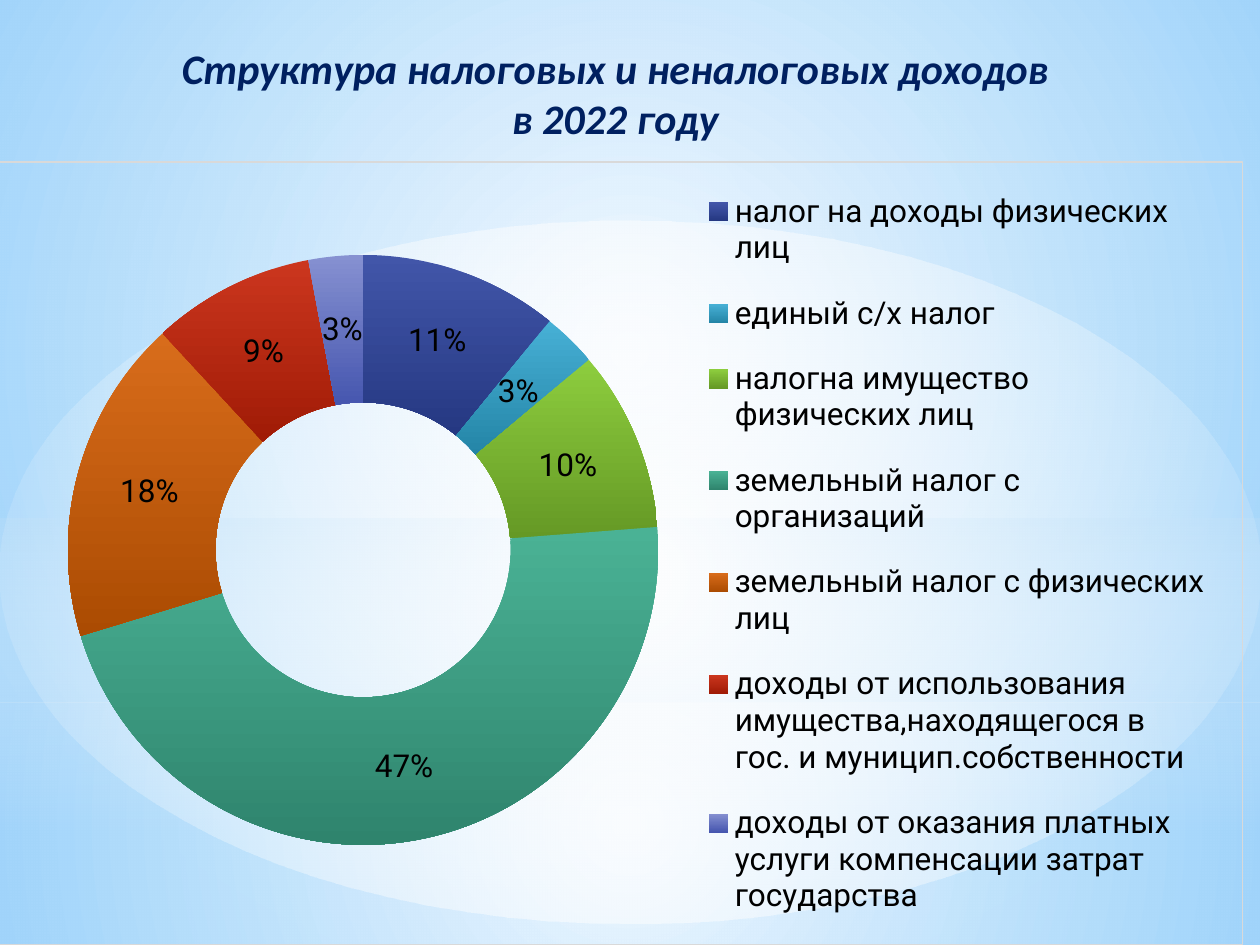
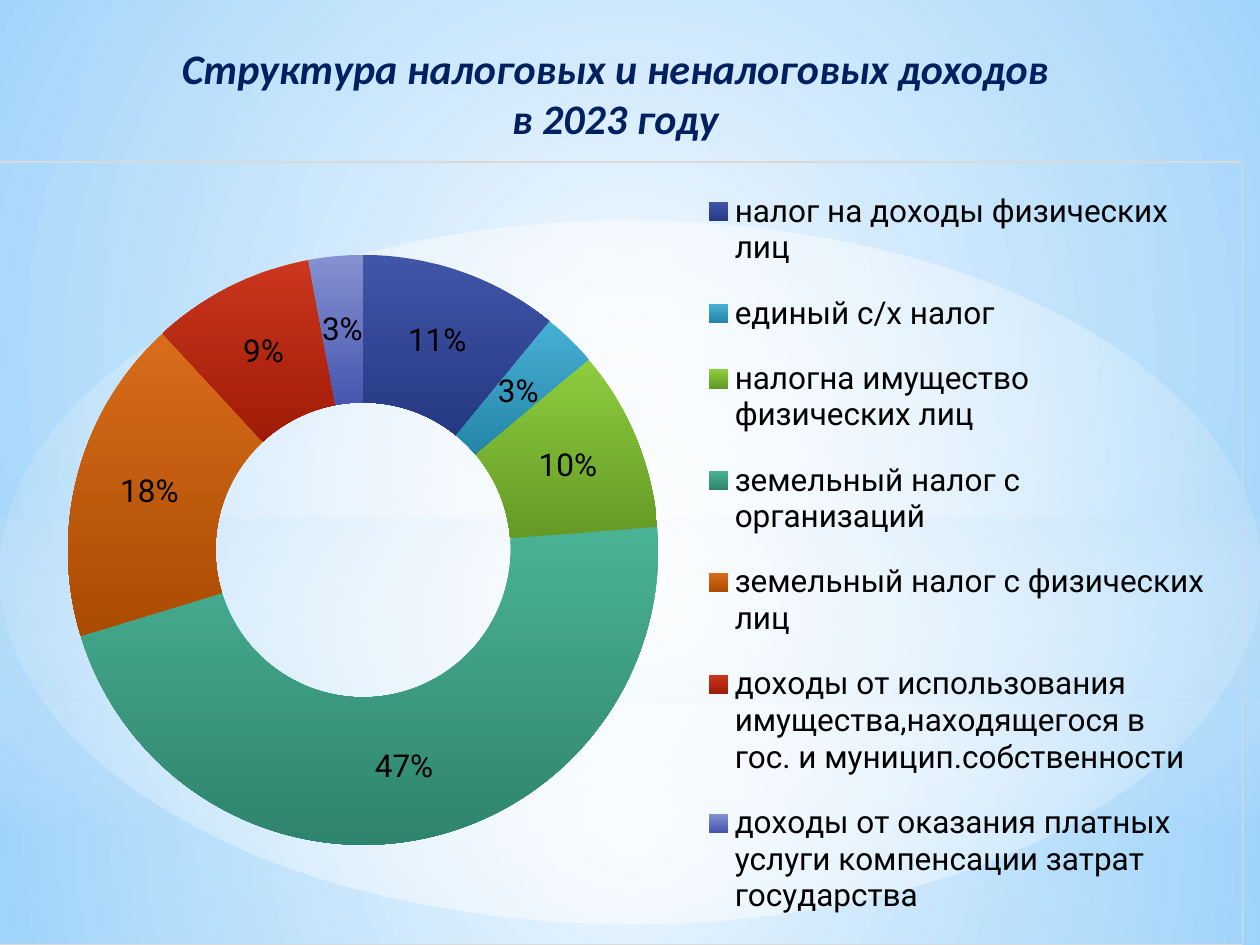
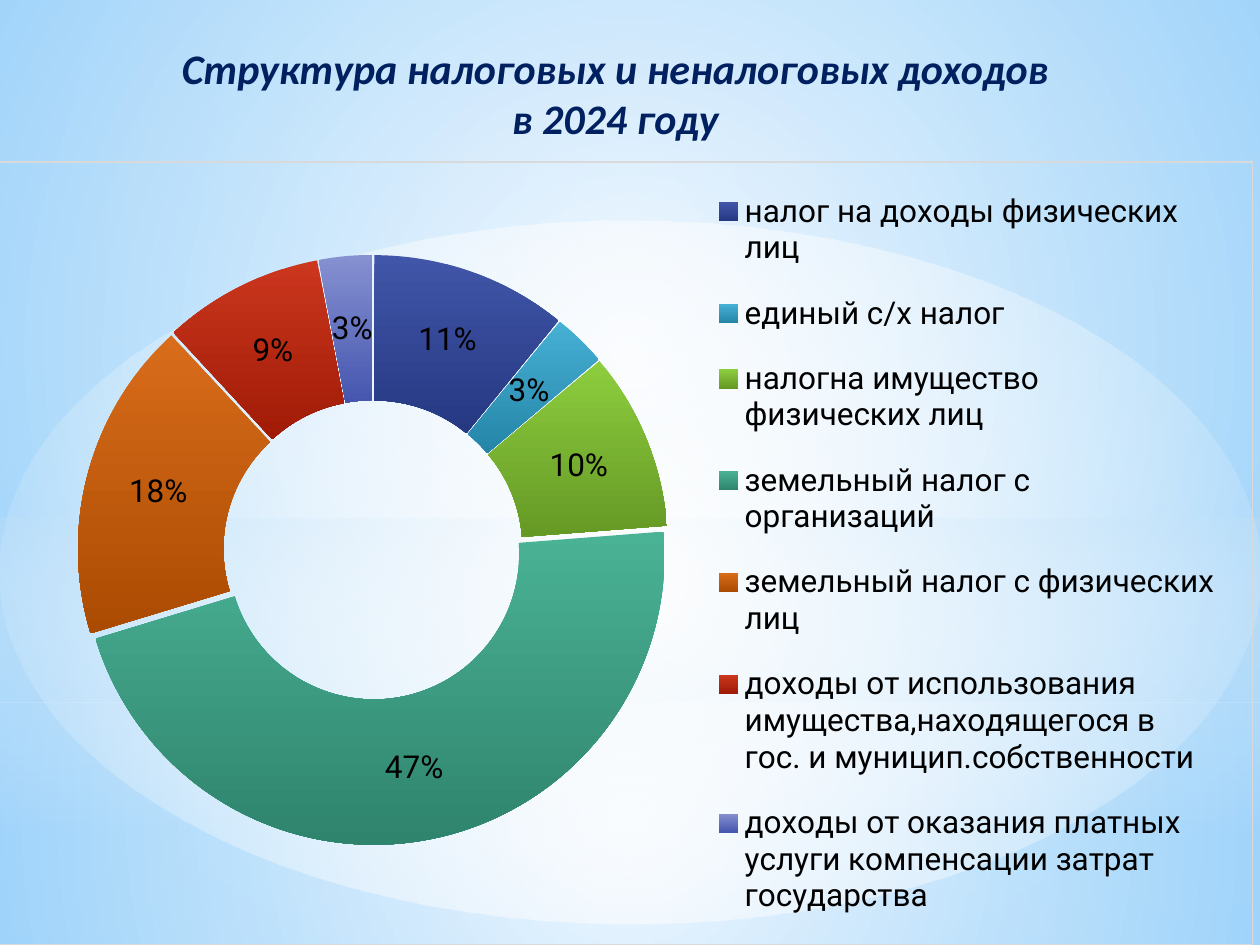
"""Builds three slides with doughnut charts of the tax and non-tax revenue structure."""
from lxml.etree import SubElement
from pptx import Presentation
from pptx.chart.data import CategoryChartData
from pptx.dml.color import RGBColor
from pptx.enum.chart import XL_CHART_TYPE, XL_LEGEND_POSITION
from pptx.enum.shapes import MSO_SHAPE
from pptx.enum.text import PP_ALIGN
from pptx.oxml import parse_xml
from pptx.oxml.ns import nsdecls, qn
from pptx.util import Cm, Pt

NAVY = RGBColor(0x00, 0x20, 0x60)
BLACK = RGBColor(0x00, 0x00, 0x00)
WHITE = RGBColor(0xFF, 0xFF, 0xFF)
PALE_BLUE = RGBColor(0xB4, 0xDC, 0xFA)
SKY_LIGHT = RGBColor(0x9C, 0xD4, 0xFF)
SKY_DEEP = RGBColor(0x5B, 0xB9, 0xFF)
BORDER_GREY = RGBColor(0xD9, 0xD9, 0xD9)

SLIDE_WIDTH, SLIDE_HEIGHT = Cm(25.4), Cm(19.05)
CENTRE = (50, 50, 50, 50)
SKY_FOCUS = (50, 25, 50, 75)
RING_PERCENT = (4.6, 11.9, 50.8, 75.4)
LEGEND_PERCENT = (57.4, 0.4, 39.7, 99.5)

BANDS = [
    (MSO_SHAPE.RECTANGLE, 14.17, 4.88, [(WHITE, 91), (PALE_BLUE, 79)], CENTRE),
    (MSO_SHAPE.RECTANGLE, 0, 14.17, [(WHITE, 89), (PALE_BLUE, 79)], CENTRE),
    (MSO_SHAPE.RECTANGLE, 10.46, 6.35, [(PALE_BLUE, 60), (WHITE, 0)], None),
    (MSO_SHAPE.OVAL, 4.45, 14.17, [(WHITE, 100), (WHITE, 0)], CENTRE),
]

TITLE = "Структура налоговых и неналоговых доходов в {} году"

REVENUES = [
    ("налог на доходы физических лиц", "4256A9", "253882"),
    ("единый с/х налог", "47B0D5", "2485A7"),
    ("налогна имущество физических лиц", "8DCD3E", "659925"),
    ("земельный налог с организаций", "4AB295", "2F846D"),
    ("земельный налог с физических лиц", "D86C1B", "AB4B02"),
    ("доходы от использования имущества,находящегося в гос. и муницип.собственности",
     "CB361E", "A01B06"),
    ("доходы от оказания платных услуги компенсации затрат государства",
     "8691D1", "4656AF"),
]

YEARS = [
    {"year": 2022, "shares": (11, 3, 10, 47, 18, 9, 3), "left": -0.29, "explosion": 0},
    {"year": 2023, "shares": (11, 3, 10, 47, 18, 9, 3), "left": -0.29, "explosion": 0},
    {"year": 2024, "shares": (11, 3, 10, 47, 18, 9, 3), "left": -0.09, "explosion": 3},
]


def set_gradient(fill, stops, focus=None):
    """Fill from the first (colour, opacity) stop to the second, downwards or around a focus."""
    fill.gradient()
    fill.gradient_angle = 270
    gradient = fill._xPr.find(qn("a:gradFill"))
    for stop, (colour, opacity) in zip(fill.gradient_stops, stops):
        stop.color.rgb = colour
    for colour_node, (colour, opacity) in zip(gradient.iter(qn("a:srgbClr")), stops):
        if opacity < 100:
            SubElement(colour_node, qn("a:alpha"), val=str(opacity * 1000))
    for position, stop_node in enumerate(gradient.iter(qn("a:gs"))):
        stop_node.set("pos", str(position * 100000))
    if focus:
        sides = " ".join(f'{side}="{share * 1000}"' for side, share in zip("ltrb", focus))
        gradient.replace(gradient.find(qn("a:lin")), parse_xml(
            f'<a:path {nsdecls("a")} path="circle"><a:fillToRect {sides}/></a:path>'))


def set_font(font, name, size, colour=BLACK):
    font.name, font.size = name, Pt(size)
    font.color.rgb = colour


def manual_layout(percents, inner=False):
    target = '<c:layoutTarget val="inner"/>' if inner else ""
    sizes = "".join(f'<c:{tag} val="{percent / 100:.3f}"/>'
                    for tag, percent in zip("xywh", percents))
    return parse_xml(
        f'<c:layout {nsdecls("c")}><c:manualLayout>{target}<c:xMode val="edge"/>'
        f'<c:yMode val="edge"/>{sizes}</c:manualLayout></c:layout>')


def add_backdrop(layout, page):
    """Move the bands drawn on the page to the layout that all pages share."""
    for placeholder in list(layout.placeholders):
        layout.shapes._spTree.remove(placeholder._element)
    set_gradient(layout.background.fill, [(SKY_LIGHT, 100), (SKY_DEEP, 100)], SKY_FOCUS)
    for kind, top, height, stops, focus in BANDS:
        band = page.shapes.add_shape(kind, 0, Cm(top), SLIDE_WIDTH, Cm(height))
        band.shadow.inherit = False
        band.line.fill.background()
        set_gradient(band.fill, stops, focus)
        layout.shapes._spTree.append(band._element)


def add_title(page, year):
    box = page.shapes.add_textbox(Cm(3.3), Cm(0.73), Cm(18.21), Cm(2.16))
    box.text_frame.word_wrap = True
    paragraph = box.text_frame.paragraphs[0]
    paragraph.text = TITLE.format(year)
    paragraph.alignment = PP_ALIGN.CENTER
    font = paragraph.runs[0].font
    set_font(font, "Calibri", 24, NAVY)
    font.bold = font.italic = True


def style_frame(chart):
    chart_node = chart._chartSpace.find(qn("c:chart"))
    chart_node.addnext(parse_xml(
        f'<c:spPr {nsdecls("c", "a")}><a:noFill/><a:ln w="9525"><a:solidFill>'
        f'<a:srgbClr val="{BORDER_GREY}"/></a:solidFill></a:ln></c:spPr>'))
    plot_area = chart_node.find(qn("c:plotArea"))
    for layout in plot_area.findall(qn("c:layout")):
        plot_area.remove(layout)
    plot_area.insert(0, manual_layout(RING_PERCENT, inner=True))


def add_legend(chart):
    chart.has_legend = True
    legend = chart.legend
    legend.position = XL_LEGEND_POSITION.RIGHT
    legend.include_in_layout = False
    set_font(legend.font, "Roboto", 18)
    node = legend._element
    for layout in node.findall(qn("c:layout")):
        node.remove(layout)
    node.find(qn("c:legendPos")).addnext(manual_layout(LEGEND_PERCENT))


def add_doughnut(page, shares, left, explosion):
    data = CategoryChartData()
    data.categories = [name for name, light, dark in REVENUES]
    data.add_series("Series 1", shares)
    chart = page.shapes.add_chart(XL_CHART_TYPE.DOUGHNUT, Cm(left), Cm(3.25),
                                  Cm(25.35), Cm(15.8), data).chart
    chart.has_title = False
    set_font(chart.font, "Arial", 10)
    style_frame(chart)
    add_legend(chart)

    plot = chart.plots[0]
    plot.vary_by_categories = True
    plot._element.find(qn("c:holeSize")).set("val", "50")
    plot.has_data_labels = True
    labels = plot.data_labels
    labels.show_percentage, labels.show_value = True, False
    labels.number_format, labels.number_format_is_linked = "0%", False
    set_font(labels.font, "Roboto", 18)

    series = plot.series[0]
    for index, (name, light, dark) in enumerate(REVENUES):
        point = series.points[index].format
        point.line.fill.background()
        set_gradient(point.fill, [(RGBColor.from_string(light), 100),
                                  (RGBColor.from_string(dark), 100)])
    if explosion:
        series._element.find(qn("c:dPt")).addprevious(
            parse_xml(f'<c:explosion {nsdecls("c")} val="{explosion}"/>'))


def main():
    deck = Presentation()
    deck.slide_width, deck.slide_height = SLIDE_WIDTH, SLIDE_HEIGHT
    blank = deck.slide_layouts[6]
    pages = [deck.slides.add_slide(blank) for _ in YEARS]
    add_backdrop(blank, pages[0])
    for page, budget in zip(pages, YEARS):
        add_title(page, budget["year"])
        add_doughnut(page, budget["shares"], budget["left"], budget["explosion"])
    deck.save("out.pptx")


if __name__ == "__main__":
    main()
